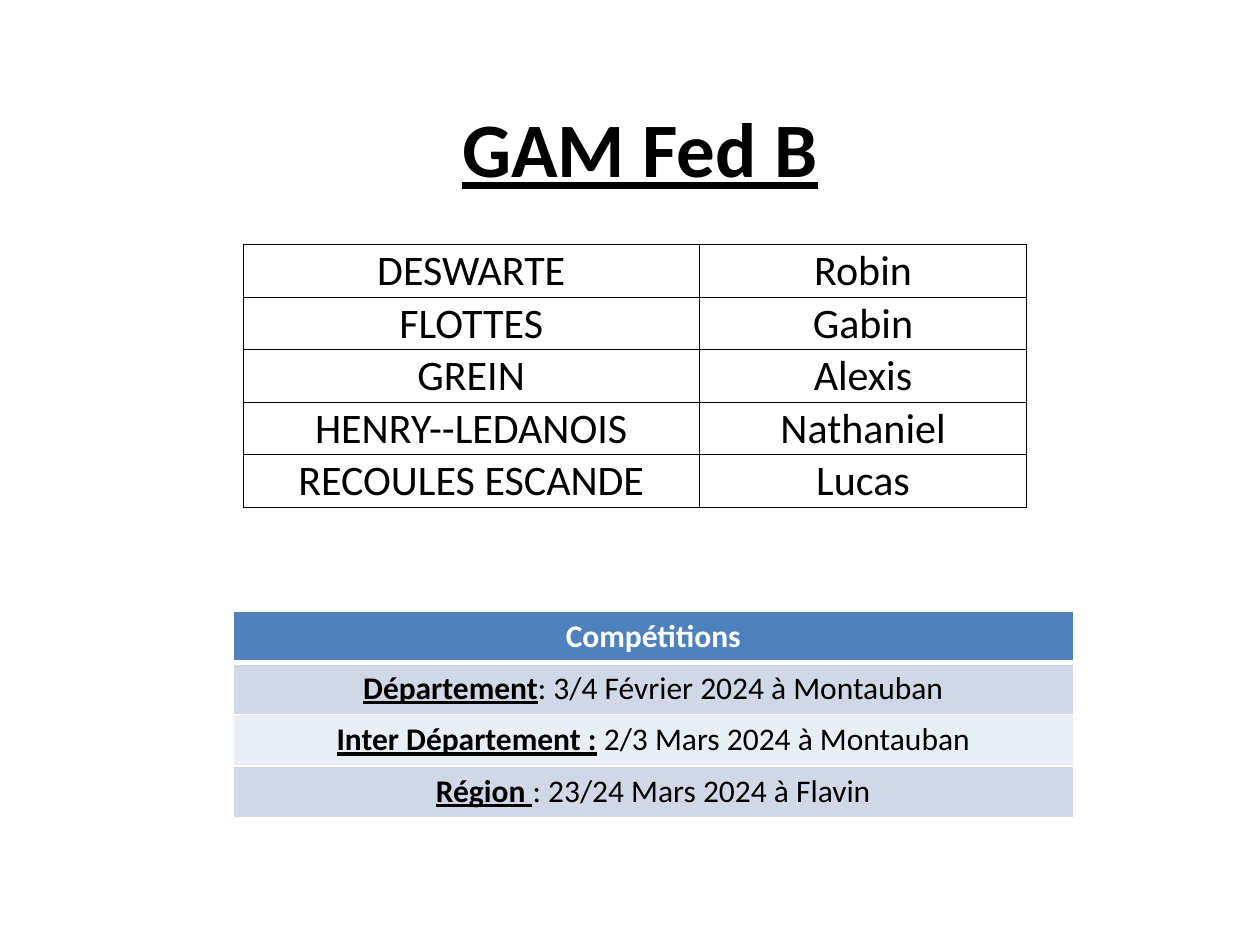
from lxml import etree
from pptx import Presentation
from pptx.dml.color import RGBColor
from pptx.enum.text import MSO_ANCHOR, PP_ALIGN
from pptx.oxml.ns import qn
from pptx.util import Inches, Pt

CENTER = PP_ALIGN.CENTER
TOP = MSO_ANCHOR.TOP
MIDDLE = MSO_ANCHOR.MIDDLE
BOTTOM = MSO_ANCHOR.BOTTOM

BLACK = RGBColor(0x00, 0x00, 0x00)
WHITE = RGBColor(0xFF, 0xFF, 0xFF)
BLUE = RGBColor(0x4F, 0x81, 0xBD)
BAND_DARK = RGBColor(0xD0, 0xD8, 0xE8)
BAND_LIGHT = RGBColor(0xE9, 0xED, 0xF4)
FONT = "Calibri"

GYMNASTS = [
    ("DESWARTE", "Robin"),
    ("FLOTTES", "Gabin"),
    ("GREIN", "Alexis"),
    ("HENRY--LEDANOIS", "Nathaniel"),
    ("RECOULES ESCANDE", "Lucas"),
]
COMPETITIONS = [
    ("Département", ": 3/4 Février 2024 à Montauban"),
    ("Inter Département :", " 2/3 Mars 2024 à Montauban"),
    ("Région ", ": 23/24 Mars 2024 à Flavin"),
]


def add_text(tf, text, size=18, color=BLACK, bold=False, underline=False):
    p = tf.paragraphs[0]
    p.alignment = CENTER
    r = p.add_run()
    r.text = text
    r.font.name = FONT
    r.font.size = Pt(size)
    r.font.color.rgb = color
    r.font.bold = bold
    r.font.underline = underline


def set_border(cell, side, color, width):
    tc_pr = cell._tc.get_or_add_tcPr()
    ln = etree.SubElement(tc_pr, qn(f"a:ln{side}"), w=str(Pt(width)))
    fill = etree.SubElement(ln, qn("a:solidFill"))
    etree.SubElement(fill, qn("a:srgbClr"), val=str(color))


def style_cell(cell, border, width, bottom=None, top=None, fill=None, anchor=TOP):
    cell.vertical_anchor = anchor
    widths = {"L": width, "R": width, "T": top or width, "B": bottom or width}
    for side, side_width in widths.items():
        set_border(cell, side, border, side_width)
    if fill is None:
        cell.fill.background()
    else:
        cell.fill.solid()
        cell.fill.fore_color.rgb = fill


def add_table(slide, left, top, col_widths, row_height, rows):
    frame = slide.shapes.add_table(
        rows, len(col_widths), Inches(left), Inches(top),
        Inches(sum(col_widths)), Inches(row_height * rows))
    table = frame.table
    table.first_row = False
    table.horz_banding = False
    for column, width in zip(table.columns, col_widths):
        column.width = Inches(width)
    for row in table.rows:
        row.height = Inches(row_height)
    return table


def add_title(slide, text):
    title = slide.shapes.title
    title.left, title.top = Inches(0.83), Inches(0.36)
    title.width, title.height = Inches(8.5), Inches(1.61)
    title.text_frame.vertical_anchor = MIDDLE
    add_text(title.text_frame, text, size=44, bold=True, underline=True)


def add_gymnasts(slide):
    table = add_table(slide, 1.93, 1.94, [3.62, 2.6], 0.41, len(GYMNASTS))
    for i, names in enumerate(GYMNASTS):
        for j, name in enumerate(names):
            cell = table.cell(i, j)
            cell.margin_left = cell.margin_right = cell.margin_top = Inches(0.01)
            cell.margin_bottom = 0
            style_cell(cell, BLACK, 0.5, anchor=BOTTOM)
            add_text(cell.text_frame, name, size=24)


def add_competitions(slide):
    table = add_table(slide, 1.85, 4.85, [6.67], 0.41, len(COMPETITIONS) + 1)
    header = table.cell(0, 0)
    style_cell(header, WHITE, 1, bottom=3, fill=BLUE)
    add_text(header.text_frame, "Compétitions", color=WHITE, bold=True)
    for i, (level, details) in enumerate(COMPETITIONS, start=1):
        cell = table.cell(i, 0)
        style_cell(cell, WHITE, 1, top=3 if i == 1 else 1,
                   fill=BAND_DARK if i % 2 else BAND_LIGHT)
        add_text(cell.text_frame, level, bold=True, underline=True)
        add_text(cell.text_frame, details)


def main():
    prs = Presentation()
    prs.slide_width, prs.slide_height = Inches(10), Inches(7.5)
    slide = prs.slides.add_slide(prs.slide_layouts[5])
    add_title(slide, "GAM Fed B")
    add_gymnasts(slide)
    add_competitions(slide)
    prs.save("out.pptx")


if __name__ == "__main__":
    main()
